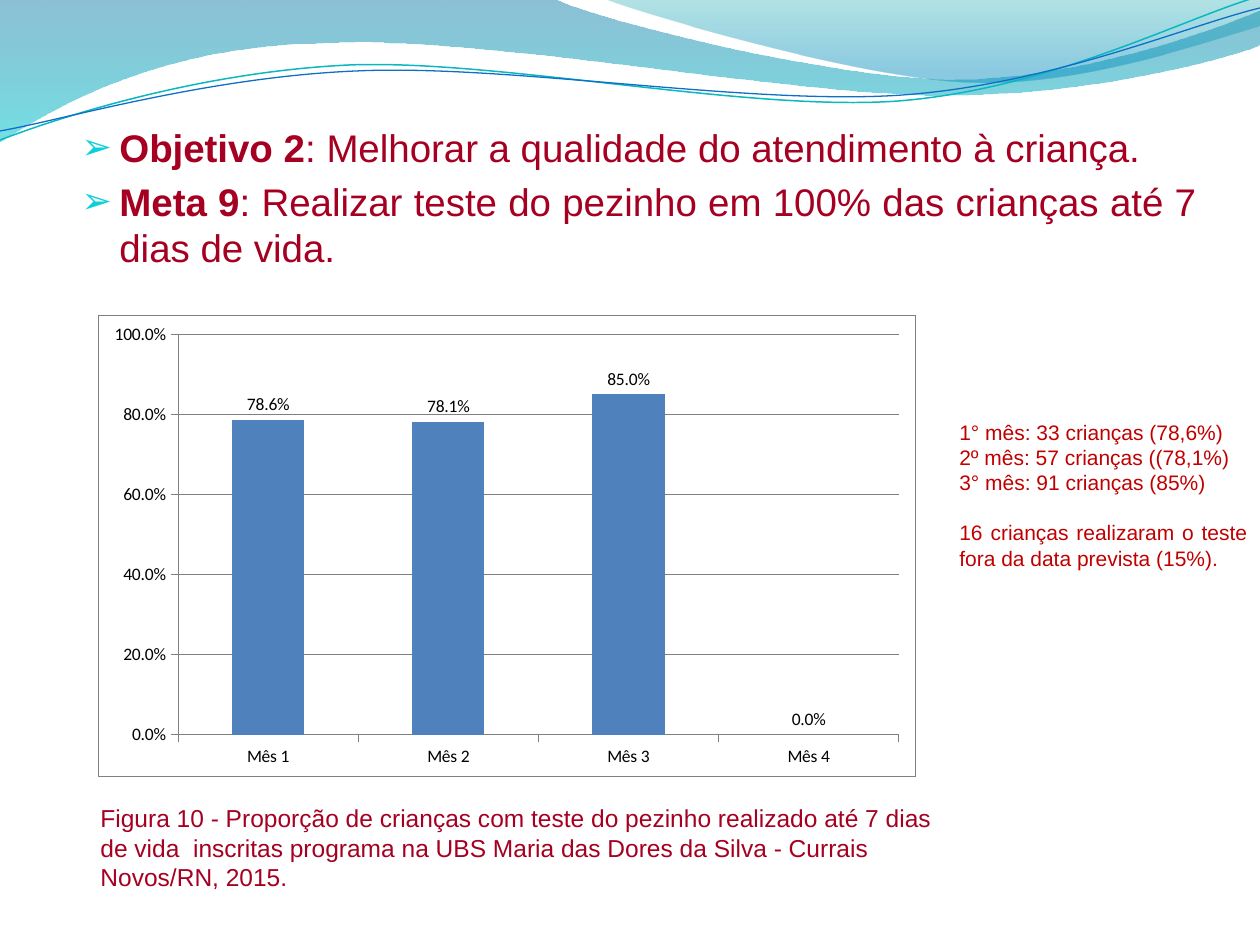
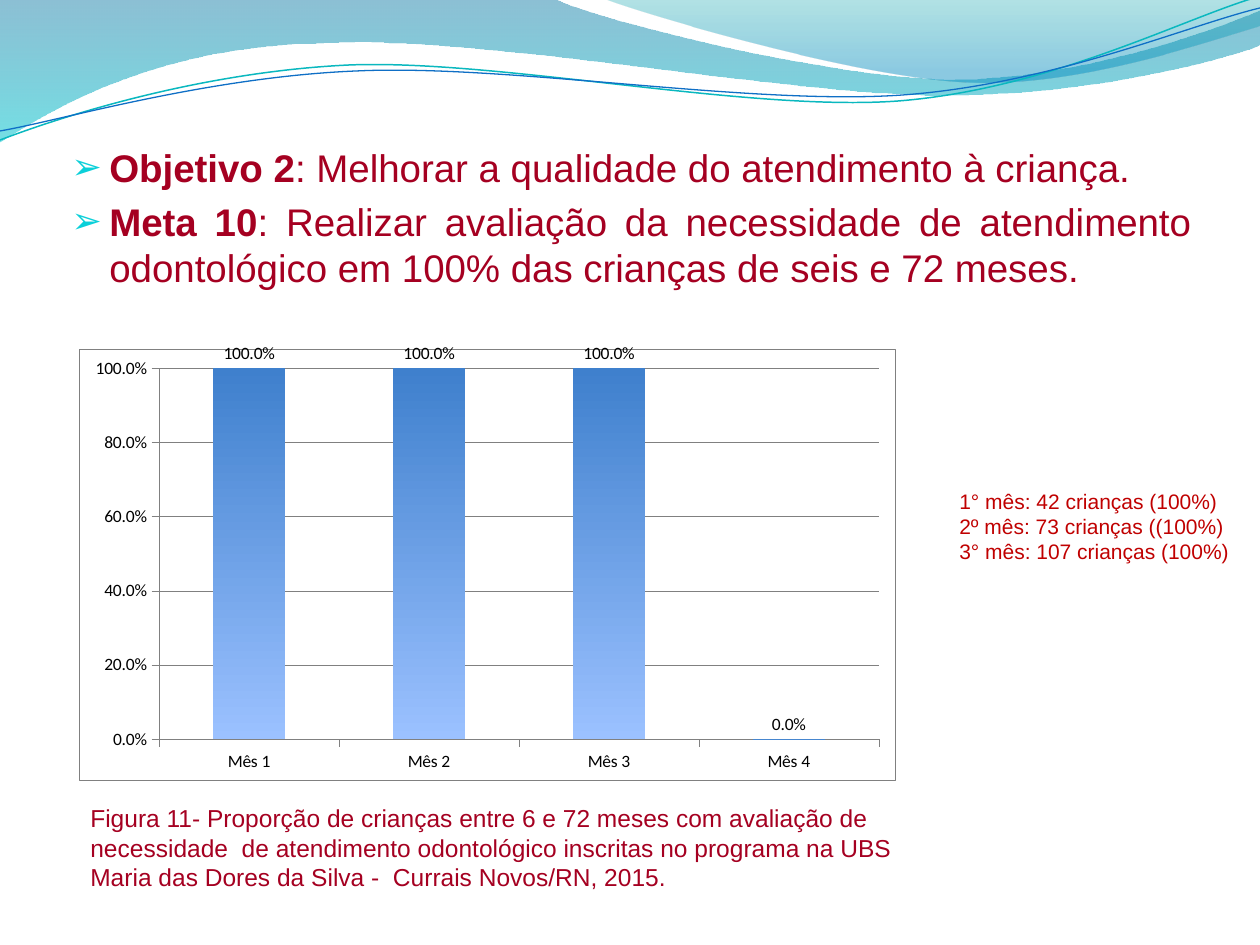
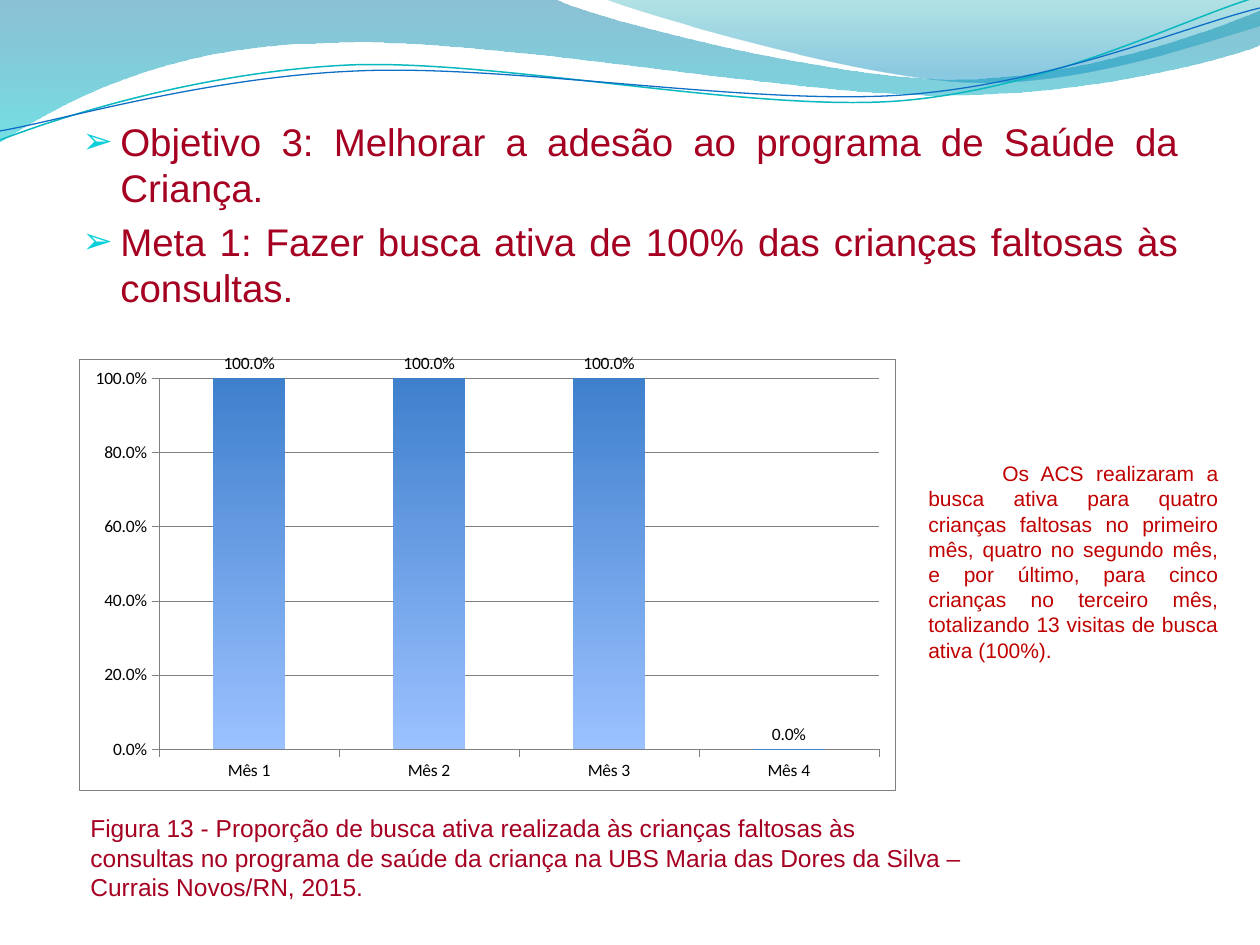
from lxml.etree import SubElement
from pptx import Presentation
from pptx.chart.data import CategoryChartData
from pptx.dml.color import RGBColor
from pptx.enum.chart import XL_CHART_TYPE as ChartType
from pptx.enum.chart import XL_LABEL_POSITION as LabelPosition
from pptx.enum.chart import XL_TICK_MARK as TickMark
from pptx.enum.text import MSO_ANCHOR as Anchor
from pptx.enum.text import PP_ALIGN as Align
from pptx.oxml import parse_xml
from pptx.oxml.ns import nsdecls, qn
from pptx.util import Pt

PX = 914400 / 126

CRIMSON, RED = "A50021", "C00000"
BULLET, AXIS_GRAY, BLACK, WHITE = "0BD0D9", "808080", "000000", "FFFFFF"
SOLID_BAR = "4F81BD"
GRADIENT_BAR = [(0, "9BC1FF"), (1, "3F80CD")]
MONTHS = ["Mês 1", "Mês 2", "Mês 3", "Mês 4"]
PERCENT = "0.0%"

# Each outline is a start point, then line steps (2 numbers) and Bézier steps (6 numbers).
WAVES = [
    ([(0, 0), (554, -1), (600, 21, 837, 79, 955, 79), (1075, 79, 1207, 33, 1260, 11),
      (1261, 45), (1239, 55, 1096, 96, 940, 95), (784, 95, 481, 35, 324, 43),
      (163, 45, 58, 105, -1, 142), (0, 0)],
     [(0, "0074A1"), (1, "00C6CF")], (45, 55)),
    ([(604, -1), (641, 14, 859, 78, 969, 82), (1079, 87, 1211, 40, 1260, 26), (1260, 0),
      (604, -1)],
     [(0, "00A1A9"), (0.8, "008BBF")], (30, 45)),
]
STRANDS = [
    ([(0, 140), (60, 117, 199, 72, 349, 65), (498, 59, 747, 112, 898, 101),
      (1050, 89, 1182, 19, 1257, -3)], "0AB8BF", 0.85),
    ([(0, 131), (59, 121, 207, 77, 357, 71), (508, 64, 752, 106, 903, 95),
      (1053, 84, 1186, 26, 1260, 8)], "0F6FC6", 0.75),
]


def emu(px):
    return round(px * PX)


def rgb(code):
    return RGBColor.from_string(code)


def bend(shape, steps):
    """Join the line segments of each six-number step into one Bézier curve."""
    segments = iter(list(shape.element.iter(qn("a:lnTo"))))
    for step in steps:
        first, *others = [next(segments) for _ in range(len(step) // 2)]
        if others:
            first.tag = qn("a:cubicBezTo")
            for segment in others:
                first.append(segment[0])
                segment.getparent().remove(segment)


def paint_gradient(fill, stops, angle):
    fill.gradient()
    fill.gradient_angle = angle
    for stop, (position, color) in zip(fill.gradient_stops, stops):
        stop.position = position
        stop.color.rgb = rgb(color)


def area_style(border):
    """White chart background, with a gray border or none."""
    edge = f'<a:solidFill><a:srgbClr val="{AXIS_GRAY}"/></a:solidFill>' if border else "<a:noFill/>"
    return parse_xml(
        f'<c:spPr {nsdecls("c", "a")}><a:solidFill><a:srgbClr val="{WHITE}"/></a:solidFill>'
        f'<a:ln w="3175">{edge}</a:ln></c:spPr>')


class Deck:
    def __init__(self):
        self.deck = Presentation()
        self.deck.slide_width, self.deck.slide_height = emu(1260), emu(945)
        self.layout = self.deck.slide_layouts[6]
        self.slide = None

    def new_slide(self):
        self.slide = self.deck.slides.add_slide(self.layout)

    def decorate_layout(self):
        """Draw the header waves and move them to the layout all slides share."""
        shared = self.layout.shapes.element
        for placeholder in list(self.layout.placeholders):
            shared.remove(placeholder.element)
        header = []
        for outline, stops, opacities in WAVES:
            wave = self.outline(outline, closed=True)
            paint_gradient(wave.fill, stops, 270)
            wave.line.fill.background()
            for color, opacity in zip(wave.element.iter(qn("a:srgbClr")), opacities):
                SubElement(color, qn("a:alpha")).set("val", str(opacity * 1000))
            header.append(wave)
        for outline, color, width in STRANDS:
            strand = self.outline(outline, closed=False)
            strand.fill.background()
            strand.line.color.rgb = rgb(color)
            strand.line.width = Pt(width)
            header.append(strand)
        for part in header:
            shared.append(part.element)

    def outline(self, outline, closed):
        start, *steps = outline
        points = [(emu(x), emu(y)) for step in steps for x, y in zip(step[::2], step[1::2])]
        builder = self.slide.shapes.build_freeform(*map(emu, start), scale=1.0)
        builder.add_line_segments(points, close=closed)
        shape = builder.convert_to_shape()
        bend(shape, steps)
        shape.shadow.inherit = False
        return shape

    def text(self, box, lines, size, color, align=Align.LEFT, margin=0, indent=0):
        """Add a text box; a line given as a pair has a bold lead."""
        frame = self.slide.shapes.add_textbox(*map(emu, box)).text_frame
        frame.word_wrap = True
        for i, line in enumerate(lines):
            paragraph = frame.add_paragraph() if i else frame.paragraphs[0]
            lead, rest = line if isinstance(line, tuple) else (line, "")
            paragraph.text = lead
            if rest:
                paragraph.runs[0].font.bold = True
                paragraph.add_run().text = rest
            paragraph.alignment = align
            properties = paragraph._p.get_or_add_pPr()
            properties.set("marL", str(emu(margin)))
            properties.set("indent", str(emu(indent)))
            for run in paragraph.runs:
                run.font.name, run.font.size = "Arial", Pt(size)
                run.font.color.rgb = rgb(color)
        return frame

    def goals(self, box, lines):
        frame = self.text(box, lines, 22, CRIMSON, Align.JUSTIFY, 38, -38)
        for paragraph in frame.paragraphs:
            paragraph.space_before = Pt(4.4)
            properties = paragraph._p.get_or_add_pPr()
            bullet_color = SubElement(properties, qn("a:buClr"))
            SubElement(bullet_color, qn("a:srgbClr")).set("val", BULLET)
            SubElement(properties, qn("a:buSzPct")).set("val", "95000")
            SubElement(properties, qn("a:buFont")).set("typeface", "Arial")
            SubElement(properties, qn("a:buChar")).set("char", "➢")

    def caption(self, box, lines):
        self.text(box, lines, 14, CRIMSON)

    def note(self, box, lines, margin=12, indent=0):
        return self.text(box, lines, 12, RED, Align.JUSTIFY, margin, indent)

    def monthly_chart(self, box, shares, gradient=False):
        data = CategoryChartData(number_format=PERCENT)
        data.categories = MONTHS
        data.add_series("Series 1", shares)
        chart = self.slide.shapes.add_chart(
            ChartType.COLUMN_CLUSTERED, *map(emu, box), data).chart
        chart.has_legend = chart.has_title = False
        self.style_font(chart.font)

        for axis in (chart.category_axis, chart.value_axis):
            axis.major_tick_mark, axis.minor_tick_mark = TickMark.OUTSIDE, TickMark.NONE
            self.style_font(axis.tick_labels.font)
            self.style_line(axis.format.line)
        scale = chart.value_axis
        scale.major_unit = 0.2
        scale.maximum_scale = 1 if gradient else None
        scale.has_major_gridlines = True
        self.style_line(scale.major_gridlines.format.line)
        scale.tick_labels.number_format = PERCENT
        scale.tick_labels.number_format_is_linked = False

        plot = chart.plots[0]
        plot.gap_width = 150
        plot.vary_by_categories = False
        bars = plot.series[0]
        bars.format.line.fill.background()
        if gradient:
            paint_gradient(bars.format.fill, GRADIENT_BAR, 90)
        else:
            bars.format.fill.solid()
            bars.format.fill.fore_color.rgb = rgb(SOLID_BAR)
        labels = bars.data_labels
        labels.show_value = True
        labels.number_format, labels.number_format_is_linked = PERCENT, False
        labels.position = LabelPosition.OUTSIDE_END
        self.style_font(labels.font)
        self.frame_chart(chart, *box[2:])

    @staticmethod
    def frame_chart(chart, width, height):
        """Fix the plot margins and fill the chart and plot areas."""
        body = chart.element.find(qn("c:chart"))
        body.addnext(area_style(border=True))
        plot_area = body.find(qn("c:plotArea"))
        plot_area.append(area_style(border=False))
        for automatic in plot_area.findall(qn("c:layout")):
            plot_area.remove(automatic)
        sizes = {"x": 80 / width, "y": 19 / height,
                 "w": (width - 96) / width, "h": (height - 60) / height}
        modes = "".join(f'<c:{side}Mode val="edge"/>' for side in "xy")
        values = "".join(f'<c:{side} val="{value:.4f}"/>' for side, value in sizes.items())
        plot_area.insert(0, parse_xml(
            f'<c:layout {nsdecls("c")}><c:manualLayout><c:layoutTarget val="inner"/>'
            f"{modes}{values}</c:manualLayout></c:layout>"))

    @staticmethod
    def style_font(font):
        font.name, font.size = "Calibri", Pt(10)
        font.color.rgb = rgb(BLACK)

    @staticmethod
    def style_line(line):
        line.color.rgb = rgb(AXIS_GRAY)
        line.width = Pt(0.25)


def heel_prick_slide(deck):
    deck.new_slide()
    deck.goals((69, 118, 1140, 76), [
        ("Objetivo 2", ": Melhorar a qualidade do atendimento à criança."),
        ("Meta 9", ": Realizar teste do pezinho em 100% das crianças até 7 dias de vida.")])
    deck.monthly_chart((98, 315, 817, 461), [0.786, 0.781, 0.85, 0])
    deck.caption((88, 797, 862, 102), [
        "Figura 10 - Proporção de crianças com teste do pezinho realizado até 7 dias de vida"
        "  inscritas programa na UBS Maria das Dores da Silva - Currais Novos/RN, 2015."])
    counts = deck.note((935, 413, 325, 190), [
        "1° mês: 33 crianças (78,6%)",
        "2º mês: 57 crianças ((78,1%)",
        "3° mês: 91 crianças (85%)",
        "16 crianças realizaram o teste fora da data prevista (15%)."])
    counts.paragraphs[-1].space_before = Pt(14.4)


def dental_slide(deck):
    deck.new_slide()
    deck.note((935, 482, 325, 89), [
        "1° mês: 42 crianças (100%)",
        "2º mês: 73 crianças ((100%)",
        "3° mês: 107 crianças (100%)"])
    deck.monthly_chart((79, 344, 816, 436), [1, 1, 1, 0], gradient=True)
    deck.goals((59, 138, 1145, 76), [
        ("Objetivo 2", ": Melhorar a qualidade do atendimento à criança."),
        ("Meta 10", ": Realizar avaliação da necessidade de atendimento odontológico"
                    " em 100% das crianças de seis e 72 meses.")])
    deck.caption((78, 797, 1182, 102), [
        "Figura 11- Proporção de crianças entre 6 e 72 meses com avaliação de",
        "necessidade  de atendimento odontológico inscritas no programa na UBS",
        "Maria das Dores da Silva -  Currais Novos/RN, 2015."])


def active_search_slide(deck):
    deck.new_slide()
    deck.monthly_chart((79, 354, 816, 436), [1, 1, 1, 0], gradient=True)
    deck.goals((70, 112, 1121, 76), [
        "Objetivo 3: Melhorar a adesão ao programa de Saúde da Criança.",
        "Meta 1: Fazer busca ativa de 100% das crianças faltosas às consultas."])
    deck.caption((78, 807, 1046, 102), [
        "Figura 13 - Proporção de busca ativa realizada às crianças faltosas às",
        "consultas no programa de saúde da criança na UBS Maria das Dores da Silva –",
        "Currais Novos/RN, 2015."])
    visits = deck.note((916, 453, 315, 217), [
        "Os ACS realizaram a busca ativa para quatro crianças faltosas no primeiro mês,"
        " quatro no segundo mês, e por último, para cinco crianças no terceiro mês,"
        " totalizando 13 visitas de busca ativa (100%)."], margin=0, indent=74)
    visits.vertical_anchor = Anchor.MIDDLE


def main():
    deck = Deck()
    heel_prick_slide(deck)
    dental_slide(deck)
    active_search_slide(deck)
    deck.decorate_layout()
    deck.deck.save("out.pptx")


if __name__ == "__main__":
    main()
